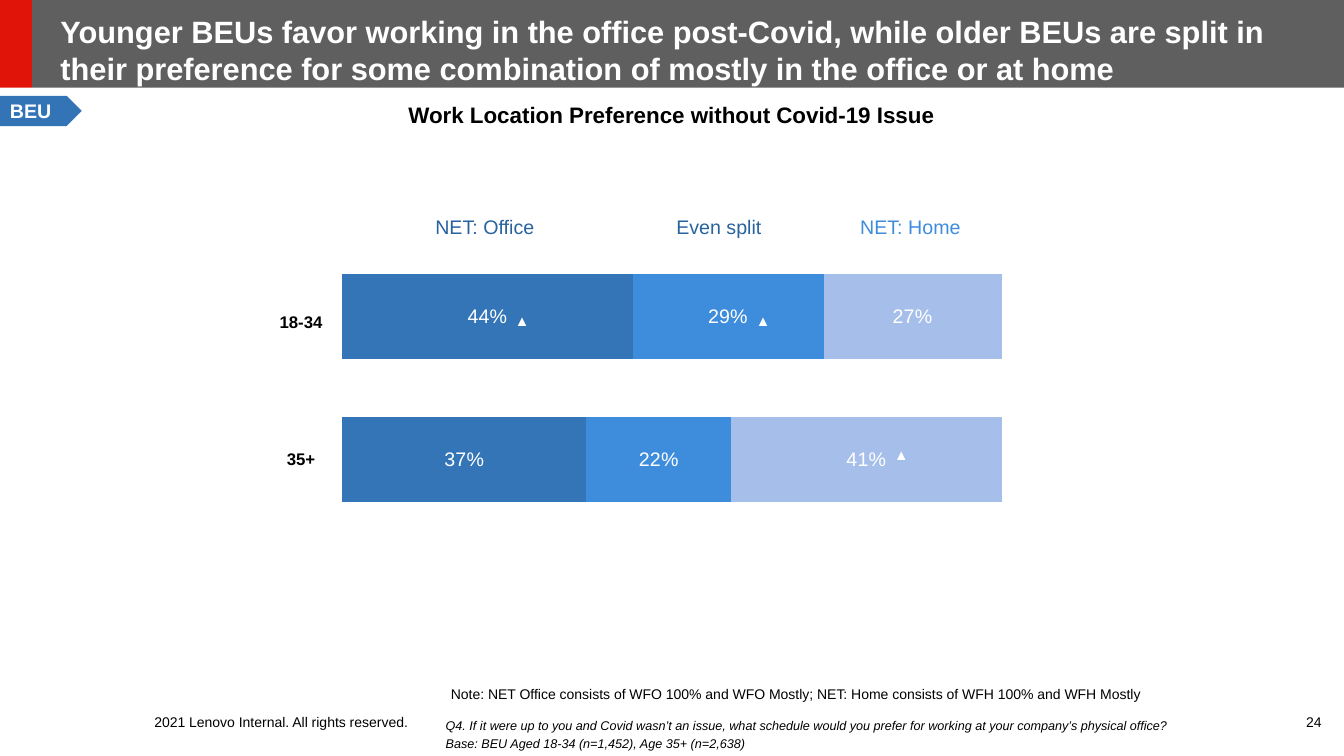
from lxml.etree import SubElement
from pptx import Presentation
from pptx.chart.data import CategoryChartData
from pptx.dml.color import RGBColor
from pptx.enum.chart import XL_CHART_TYPE
from pptx.enum.shapes import MSO_SHAPE
from pptx.enum.text import MSO_ANCHOR, MSO_AUTO_SIZE, PP_ALIGN
from pptx.oxml import parse_xml
from pptx.oxml.ns import nsdecls, qn
from pptx.util import Inches, Pt

BLACK = RGBColor(0x00, 0x00, 0x00)
WHITE = RGBColor(0xFF, 0xFF, 0xFF)
GRAY = RGBColor(0x5F, 0x5F, 0x5F)
RED = RGBColor(0xE1, 0x14, 0x0A)
TAG_BLUE = RGBColor(0x32, 0x74, 0xB6)
NAVY = RGBColor(0x29, 0x63, 0x9E)
DARK_BLUE = RGBColor(0x33, 0x75, 0xB7)
MID_BLUE = RGBColor(0x3E, 0x8D, 0xDD)
LIGHT_BLUE = RGBColor(0xA6, 0xBF, 0xEA)

TITLE = ("Younger BEUs favor working in the office post-Covid, while older BEUs are split in "
         "their preference for some combination of mostly in the office or at home")
QUESTION = [
    "Q4. If it were up to you and Covid wasn’t an issue, what schedule would you prefer "
    "for working at your company’s physical office?",
    "Base: BEU Aged 18-34 (n=1,452), Age 35+ (n=2,638)",
]
HEADING = "Work Location Preference without Covid-19 Issue"
NOTE = "Note: NET Office consists of WFO 100% and WFO Mostly; NET: Home consists of WFH 100% and WFH Mostly"
COPYRIGHT = "2021 Lenovo Internal. All rights reserved."
PAGE = "24"
TAG = "BEU"
SERIES = [
    ("Series 1", (0.44, 0.37), DARK_BLUE),
    ("Series 2", (0.29, 0.22), MID_BLUE),
    ("Series 3", (0.27, 0.41), LIGHT_BLUE),
]
NET_LABELS = [("NET: Office", 28.88, NAVY), ("Even split", 46.29, NAVY), ("NET: Home", 60.54, MID_BLUE)]
AGES = [("18-34", 40.53), ("35+", 58.67)]
MARKERS = [(37.58, 40.53), (55.51, 40.53), (65.79, 58.27)]

NO_INSETS = (0, 0, 0, 0)
NARROW_INSETS = (0.02, 0.05, 0.02, 0.05)
NORMAL_INSETS = (0.1, 0.05, 0.1, 0.05)

presentation = Presentation()
presentation.slide_width = Inches(13.33)
presentation.slide_height = Inches(7.5)
slide = presentation.slides.add_slide(presentation.slide_layouts[1])


def area(left, top, width, height):
    across, down = presentation.slide_width / 100, presentation.slide_height / 100
    return round(left * across), round(top * down), round(width * across), round(height * down)


def write(shape, lines, size, color, bold=False, italic=False, align=PP_ALIGN.LEFT,
          anchor=MSO_ANCHOR.TOP, insets=NORMAL_INSETS, wrap=True):
    frame = shape.text_frame
    frame.text = "\n".join(lines)
    frame.auto_size = MSO_AUTO_SIZE.NONE
    frame.word_wrap = wrap
    frame.vertical_anchor = anchor
    frame.margin_left, frame.margin_top, frame.margin_right, frame.margin_bottom = map(Inches, insets)
    for index, paragraph in enumerate(frame.paragraphs):
        paragraph.alignment = align
        paragraph.space_before = Pt(2 if index else 0)
        for run in paragraph.runs:
            run.font.name = "Arial"
            run.font.size = Pt(size)
            run.font.bold = bold
            run.font.italic = italic
            run.font.color.rgb = color


def add_label(text, place, size, color, **style):
    write(slide.shapes.add_textbox(*area(*place)), [text], size, color, **style)


def add_block(kind, place, color):
    shape = slide.shapes.add_shape(kind, *area(*place))
    shape.shadow.inherit = False
    shape.fill.solid()
    shape.fill.fore_color.rgb = color
    shape.line.fill.background()
    return shape


def place_placeholder(shape, place):
    shape.left, shape.top, shape.width, shape.height = area(*place)


def add_preference_chart(place):
    data = CategoryChartData(number_format="0%")
    data.categories = ["1", "2"]
    for name, values, color in SERIES:
        data.add_series(name, values)
    chart = slide.shapes.add_chart(XL_CHART_TYPE.BAR_STACKED_100, *area(*place), data).chart
    chart.has_legend = False
    chart.has_title = False
    chart.font.name = "Arial"
    chart.font.size = Pt(10)
    chart.font.color.rgb = BLACK
    chart.category_axis.reverse_order = True
    chart.category_axis.visible = False
    chart.value_axis.has_major_gridlines = False
    chart.value_axis.tick_labels.number_format = "0%"
    chart.value_axis.visible = False
    plot = chart.plots[0]
    plot.gap_width = 70
    plot.overlap = 100
    plot.vary_by_categories = False
    for series, (name, values, color) in zip(plot.series, SERIES):
        series.format.fill.solid()
        series.format.fill.fore_color.rgb = color
        labels = series.data_labels
        labels.show_value = True
        labels.number_format = "0%"
        labels.number_format_is_linked = False
        labels.font.name = "Arial"
        labels.font.size = Pt(14)
        labels.font.color.rgb = WHITE
    plot_area = chart.element.find(".//" + qn("c:plotArea"))
    for layout in plot_area.findall(qn("c:layout")):
        plot_area.remove(layout)
    layout = parse_xml(f"<c:layout {nsdecls('c')}><c:manualLayout/></c:layout>")
    settings = [("layoutTarget", "inner"), ("xMode", "edge"), ("yMode", "edge"),
                ("x", "0.02"), ("y", "0.02"), ("w", "0.96"), ("h", "0.96")]
    for tag, value in settings:
        SubElement(layout[0], qn("c:" + tag)).set("val", value)
    plot_area.insert(0, layout)


for place, color in [((2.4, 0, 97.6, 11.6), GRAY), ((0, 0, 2.4, 11.6), RED)]:
    band = add_block(MSO_SHAPE.RECTANGLE, place, color)
    slide.shapes.element.insert(2, band.element)

title = slide.shapes.title
place_placeholder(title, (4.5, 2.4, 93.25, 8.27))
write(title, [TITLE], 22, WHITE, bold=True, anchor=MSO_ANCHOR.MIDDLE, insets=NO_INSETS)

question = slide.placeholders[1]
place_placeholder(question, (32.41, 91.73, 55.44, 8.27))
write(question, QUESTION, 9, BLACK, italic=True, anchor=MSO_ANCHOR.BOTTOM)
for paragraph in question.text_frame.paragraphs:
    properties = paragraph._p.get_or_add_pPr()
    properties.set("marL", "0")
    properties.set("indent", "0")
    SubElement(properties, qn("a:buNone"))

add_preference_chart((24.46, 31.6, 51.09, 39.47))

tag = add_block(MSO_SHAPE.PENTAGON, (0, 12.67, 6.08, 4), TAG_BLUE)
write(tag, [TAG], 14, WHITE, bold=True, anchor=MSO_ANCHOR.MIDDLE)

add_label(HEADING, (27.68, 12.67, 44.56, 4.93), 16, BLACK, bold=True, align=PP_ALIGN.CENTER)
for text, left, color in NET_LABELS:
    add_label(text, (left, 27.47, 14.4, 5.07), 14, color, align=PP_ALIGN.CENTER,
              anchor=MSO_ANCHOR.MIDDLE, insets=NARROW_INSETS)
for text, top in AGES:
    add_label(text, (20, top, 4.8, 4), 12, BLACK, bold=True, align=PP_ALIGN.CENTER, wrap=False)
for left, top in MARKERS:
    add_label("▲", (left, top, 2.93, 3.73), 10.5, WHITE, bold=True, italic=True, wrap=False)
add_label(NOTE, (24.76, 88.8, 68.87, 5.87), 10, BLACK, align=PP_ALIGN.CENTER,
          anchor=MSO_ANCHOR.MIDDLE, insets=NARROW_INSETS)
add_label(COPYRIGHT, (11.48, 94.4, 19.8, 2.27), 10, BLACK, anchor=MSO_ANCHOR.MIDDLE, insets=NO_INSETS)
add_label(PAGE, (95.95, 94.4, 3.6, 2.27), 10, BLACK, align=PP_ALIGN.CENTER,
          anchor=MSO_ANCHOR.MIDDLE, insets=NO_INSETS)

presentation.save("out.pptx")
